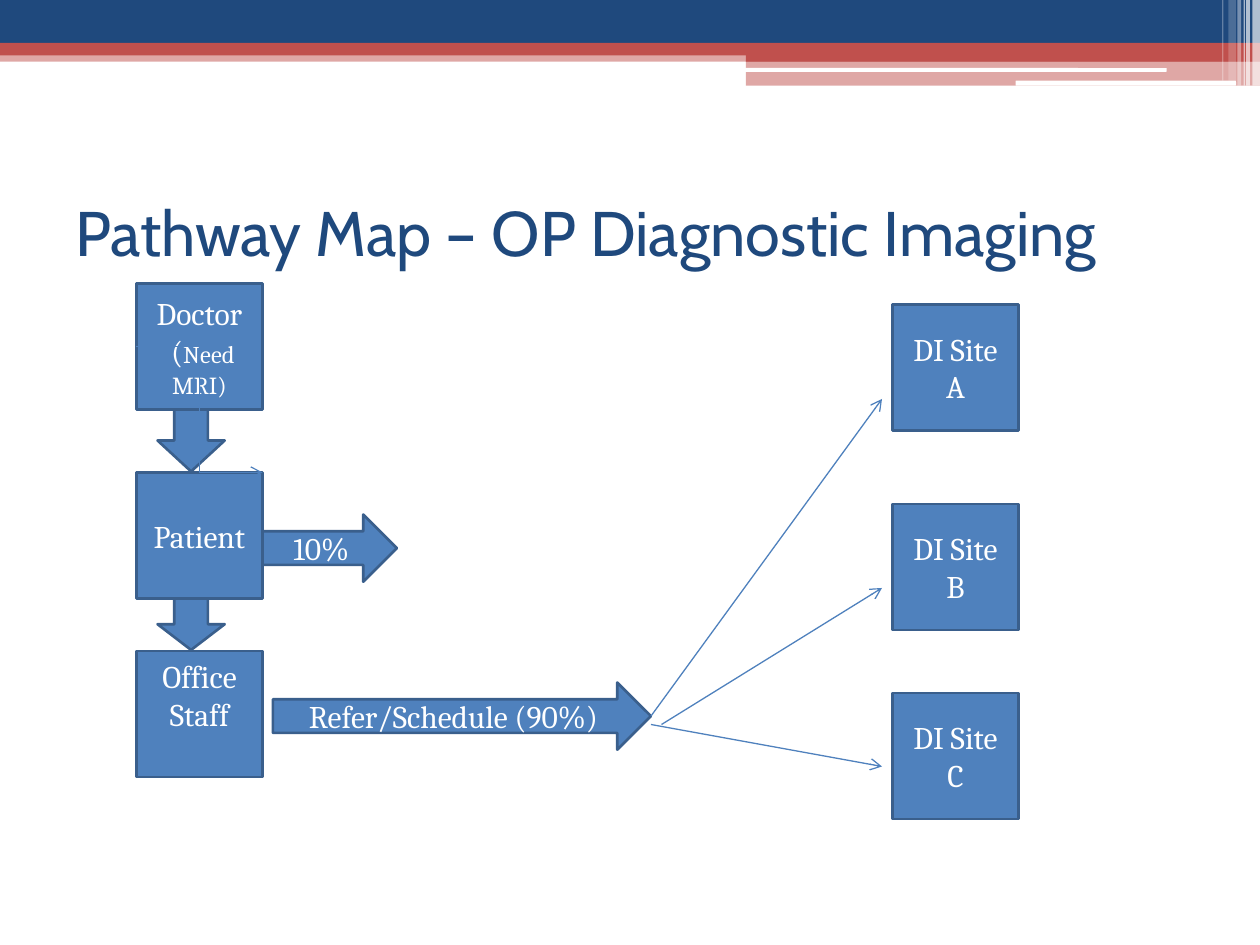
from lxml import etree
from pptx import Presentation
from pptx.dml.color import RGBColor
from pptx.enum.shapes import MSO_CONNECTOR, MSO_SHAPE
from pptx.enum.text import MSO_ANCHOR, MSO_AUTO_SIZE, PP_ALIGN
from pptx.oxml.ns import qn
from pptx.util import Inches, Pt

RECT, ROUNDED = MSO_SHAPE.RECTANGLE, MSO_SHAPE.ROUNDED_RECTANGLE
DOWN, RIGHT = MSO_SHAPE.DOWN_ARROW, MSO_SHAPE.RIGHT_ARROW
STRAIGHT, ELBOW = MSO_CONNECTOR.STRAIGHT, MSO_CONNECTOR.ELBOW
MIDDLE, LEFT, CENTER = MSO_ANCHOR.MIDDLE, PP_ALIGN.LEFT, PP_ALIGN.CENTER

WIDTH, HEIGHT = Inches(10), Inches(7.5)
CELL = WIDTH / 120
BOX = 12
ARROW = 6.4
STEP_COLUMN, SITE_COLUMN = 13, 85
COLORS = {"navy": "1F497D", "red": "C0504D", "white": "FFFFFF",
          "blue": "4F81BD", "outline": "3A5F8C"}

HEADER_BANDS = [
    (0, 4, 100, 0.9, "red", 50),
    (0, 0, 100, 3.4, "navy", 100),
    (0, 3.4, 100, 1, "red", 100),
    (59.2, 3.9, 40.8, 1, "red", 100),
    (59.2, 4.8, 40.8, 2, "red", 50),
]
HEADER_RULES = [(59.1, 5.4, 33.5, 0.3), (80.6, 6.4, 17.5, 0.4)]
CORNER_STRIPES = [
    (99.4, 0.6, 6.8, 65), (98.9, 0.3, 6.8, 65), (98.7, 0.1, 6.8, 60),
    (98.2, 0.3, 6.8, 40), (97.5, 0.6, 6.4, 20), (97, 0.1, 6.4, 30),
]
STEPS = [
    (27, [[("Doctor", 18)], [(" (", 18), ("Need MRI)", 14)]], 0.05),
    (45, [[("Patient", 18)]], 0.05),
    (62, [[("Office Staff", 18)]], 0.35),
]
SITES = [(29, "DI Site A"), (48, "DI Site B"), (66, "DI Site C")]
REFERRALS = [((62, 68.2), (84, 38)), ((63, 69), (84, 56)), ((62, 69), (84, 73))]


def color(name):
    return RGBColor.from_string(COLORS[name])


def cells(*counts):
    return [round(count * CELL) for count in counts]


def shares(*percents):
    return [round(WIDTH * percent / 100) for percent in percents]


def add_run(paragraph, words, size, font, tint):
    run = paragraph.add_run()
    run.text = words
    run.font.size = Pt(size)
    run.font.name = font
    run.font.color.rgb = color(tint)


def add_band(slide, left, top, width, height, tint, opacity=100, preset=RECT):
    band = slide.shapes.add_shape(preset, *shares(left, top, width, height))
    band.shadow.inherit = False
    band.line.fill.background()
    band.fill.solid()
    band.fill.fore_color.rgb = color(tint)
    if opacity < 100:
        tone = next(band._element.spPr.iter(qn("a:srgbClr")))
        etree.SubElement(tone, qn("a:alpha"), val=str(opacity * 1000))


def add_header(slide):
    for band in HEADER_BANDS:
        add_band(slide, *band)
    for rule in HEADER_RULES:
        add_band(slide, *rule, "white", preset=ROUNDED)
    for left, width, height, opacity in CORNER_STRIPES:
        add_band(slide, left, 0, width, height, "white", opacity)


def add_title(slide, words):
    title = slide.shapes.title
    title.left, title.top, title.width, title.height = cells(6, 15, 108, 14)
    frame = title.text_frame
    frame.auto_size = MSO_AUTO_SIZE.NONE
    frame.vertical_anchor = MIDDLE
    frame.paragraphs[0].alignment = LEFT
    add_run(frame.paragraphs[0], words, 36, "Cabin", "navy")


def add_block(slide, preset, place, lines=(), bottom_inset=0.05):
    block = slide.shapes.add_shape(preset, *cells(*place))
    block.shadow.inherit = False
    block.fill.solid()
    block.fill.fore_color.rgb = color("blue")
    block.line.color.rgb = color("outline")
    block.line.width = Pt(1.5)
    frame = block.text_frame
    frame.word_wrap = True
    frame.vertical_anchor = MIDDLE
    frame.margin_bottom = Inches(bottom_inset)
    for index, line in enumerate(lines):
        paragraph = frame.add_paragraph() if index else frame.paragraphs[0]
        paragraph.alignment = CENTER
        for words, size in line:
            add_run(paragraph, words, size, "Cambria", "white")


def add_link(slide, kind, start, end):
    link = slide.shapes.add_connector(kind, *cells(*start, *end))
    link.line.color.rgb = color("blue")
    link.line.width = Pt(0.75)
    etree.SubElement(link.line._get_or_add_ln(), qn("a:tailEnd"), type="arrow")
    etree.SubElement(link._element.spPr, qn("a:effectLst"))


def add_pathway(slide):
    for row, lines, bottom_inset in STEPS:
        add_block(slide, RECT, (STEP_COLUMN, row, BOX, BOX), lines, bottom_inset)
    for (row, *_), (next_row, *_) in zip(STEPS, STEPS[1:]):
        top = row + BOX
        add_block(slide, DOWN, (15, top, ARROW, next_row - top - 0.1))
    add_block(slide, RIGHT, (26, 65, 36, ARROW), [[("Refer/Schedule (90%)", 18)]])
    for row, site in SITES:
        add_block(slide, RECT, (SITE_COLUMN, row, BOX, BOX), [[(site, 18)]])
    for start, end in REFERRALS:
        add_link(slide, STRAIGHT, start, end)
    add_link(slide, ELBOW, (STEP_COLUMN, 33), (STEP_COLUMN + BOX, 45))
    add_block(slide, RIGHT, (STEP_COLUMN + BOX, 49, 12.8, ARROW), [[("10%", 18)]])


def main():
    deck = Presentation()
    deck.slide_width, deck.slide_height = WIDTH, HEIGHT
    slide = deck.slides.add_slide(deck.slide_layouts[5])
    add_header(slide)
    add_title(slide, "Pathway Map – OP Diagnostic Imaging")
    add_pathway(slide)
    deck.save("out.pptx")


if __name__ == "__main__":
    main()
